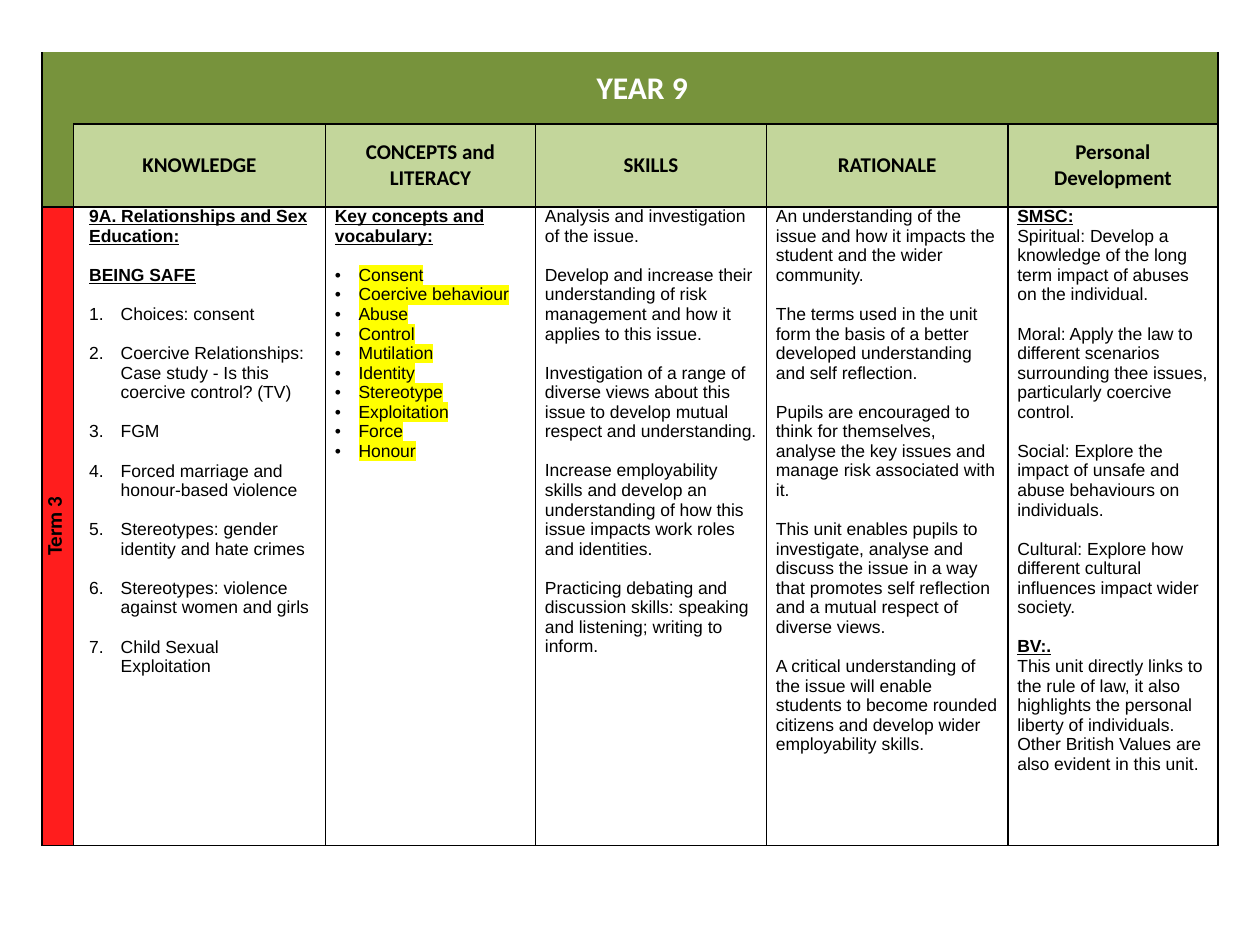
import pptx
import pptx.util
import pptx.dml.color
import pptx.enum.text
import pptx.oxml
import pptx.oxml.ns
from lxml import etree

Pt = pptx.util.Pt
Align = pptx.enum.text.PP_ALIGN
Anchor = pptx.enum.text.MSO_ANCHOR
qn = pptx.oxml.ns.qn

# Content: each body entry is (kind, text, gap before)
TITLE = "YEAR 9 "
TERM = "Term 3"
HEADINGS = ["KNOWLEDGE", "CONCEPTS and LITERACY", "SKILLS", "RATIONALE", "Personal Development"]
LESSONS = [
    "Choices: consent",
    "Coercive Relationships: Case study - Is this coercive control? (TV)",
    "FGM",
    "Forced marriage and honour-based violence",
    "Stereotypes: gender identity and hate crimes",
    "Stereotypes: violence against women and girls",
    "Child Sexual Exploitation",
]
VOCABULARY = ["Consent", "Coercive behaviour", "Abuse", "Control", "Mutilation",
              "Identity", "Stereotype", "Exploitation", "Force", "Honour"]
SKILLS = [
    "Analysis and investigation of the issue.",
    "Develop and increase their understanding of risk management and how it applies to this issue.",
    "Investigation of a range of diverse views about this issue to develop mutual respect and understanding.",
    "Increase employability skills and develop an understanding of how this issue impacts work roles and identities.",
    "Practicing debating and discussion skills: speaking and listening; writing to inform.",
]
RATIONALE = [
    "An understanding of the issue and how it impacts the student and the wider community.",
    "The terms used in the unit form the basis of a better developed understanding and self reflection.",
    "Pupils are encouraged to think for themselves, analyse the key issues and manage risk associated with it.",
    "This unit enables pupils to investigate, analyse and discuss the issue in a way that promotes "
    "self reflection and a mutual respect of diverse views.",
    "A critical understanding of the issue will enable students to become rounded citizens and "
    "develop wider employability skills.",
]
BODIES = [
    [("heading", "9A. Relationships and Sex Education:", False), ("heading", "BEING SAFE", True)]
    + [("number", lesson, True) for lesson in LESSONS],
    [("heading", "Key concepts and vocabulary:", False)]
    + [("bullet", word, index == 0) for index, word in enumerate(VOCABULARY)],
    [("text", skill, index > 0) for index, skill in enumerate(SKILLS)],
    [("text", reason, index > 0) for index, reason in enumerate(RATIONALE)],
    [
        ("heading", "SMSC:", False),
        ("text", "Spiritual: Develop a knowledge of the long term impact of abuses on the individual.", False),
        ("text", "Moral: Apply the law to different scenarios surrounding thee issues, "
                 "particularly coercive control.", True),
        ("text", "Social: Explore the impact of unsafe and abuse behaviours on individuals.", True),
        ("text", "Cultural: Explore how different cultural influences impact wider society.", True),
        ("heading", "BV:.", True),
        ("text", "This unit directly links to the rule of law, it also highlights the personal liberty "
                 "of individuals. Other British Values are also evident in this unit.", False),
    ],
]

THEME = {
    "title_fill": "77933C", "heading_fill": "C3D69B", "term_fill": "FF1D1D", "body_fill": "FFFFFF",
    "ink": "000000", "title_ink": "FFFFFF", "highlight": "FFFF00",
    "display": "Calibri", "body": "Arial",
    "title_size": 18, "heading_size": 12, "body_size": 10,
    "gap": 11.2, "border": 1,
}
COLUMNS = [18, 144, 120, 132, 138, 120]
ROWS = [41, 47.3, 365]
LEFT, TOP = 24, 30
INSET, WIDE_INSET = 5.4, 9
INDENTS = {"number": 18, "bullet": 13.5}
NO_STYLE = "{2D5ABB26-0587-4C30-8999-92F81FD0307C}"


def color(name):
    return pptx.dml.color.RGBColor.from_string(THEME[name])


def format_cell(cell, fill, edges="LRTB", inset=INSET, anchor=Anchor.MIDDLE):
    cell.margin_left = cell.margin_right = Pt(inset)
    cell.margin_top = cell.margin_bottom = 0
    cell.vertical_anchor = anchor
    properties = cell._tc.get_or_add_tcPr()
    for edge in "LRTB":
        line = etree.SubElement(properties, qn(f"a:ln{edge}"), w=str(Pt(THEME["border"])))
        if edge in edges:
            paint = etree.SubElement(line, qn("a:solidFill"))
            etree.SubElement(paint, qn("a:srgbClr"), val=THEME["ink"])
        else:
            etree.SubElement(line, qn("a:noFill"))
    cell.fill.solid()
    cell.fill.fore_color.rgb = color(fill)


def format_font(para, family, size, ink="ink", bold=False):
    para.font.name = THEME[family]
    para.font.size = Pt(THEME[size])
    para.font.color.rgb = color(ink)
    para.font.bold = bold


def write_label(cell, text, size="heading_size", ink="ink"):
    para = cell.text_frame.paragraphs[0]
    para.text = text
    para.alignment = Align.CENTER
    format_font(para, "display", size, ink, bold=True)


def add_marker(para, kind):
    properties = para._p.get_or_add_pPr()
    properties.set("marL", str(Pt(INDENTS[kind])))
    properties.set("indent", str(-Pt(INDENTS[kind])))
    etree.SubElement(properties, qn("a:buFont"), typeface=THEME["body"])
    if kind == "number":
        etree.SubElement(properties, qn("a:buAutoNum"), type="arabicPeriod")
    else:
        etree.SubElement(properties, qn("a:buChar"), char="•")


def write_body(cell, entries):
    frame = cell.text_frame
    for index, (kind, text, gap) in enumerate(entries):
        para = frame.paragraphs[0] if index == 0 else frame.add_paragraph()
        span = para.add_run()
        span.text = text
        if kind in INDENTS:
            add_marker(para, kind)
        if gap:
            para.space_before = Pt(THEME["gap"])
        format_font(para, "body", "body_size", bold=kind == "heading")
        para.font.underline = kind == "heading"
        if kind == "bullet":
            mark = etree.SubElement(span._r.get_or_add_rPr(), qn("a:highlight"))
            etree.SubElement(mark, qn("a:srgbClr"), val=THEME["highlight"])


def main():
    deck = pptx.Presentation()
    deck.slide_width, deck.slide_height = Pt(720), Pt(540)
    page = deck.slides.add_slide(deck.slide_layouts[6])

    # Table grid
    frame = page.shapes.add_table(len(ROWS), len(COLUMNS), Pt(LEFT), Pt(TOP),
                                  Pt(sum(COLUMNS)), Pt(sum(ROWS)))
    table = frame.table
    table.first_row = table.horz_banding = False
    table._tbl.tblPr.find(qn("a:tableStyleId")).text = NO_STYLE
    for column, width in zip(table.columns, COLUMNS):
        column.width = Pt(width)
    for row, height in zip(table.rows, ROWS):
        row.height = Pt(height)

    # Title band and the corner beside it
    table.cell(0, 0).merge(table.cell(1, 0))
    table.cell(0, 1).merge(table.cell(0, 5))
    format_cell(table.cell(0, 0), "title_fill", "LB")
    format_cell(table.cell(0, 1), "title_fill", "RB")
    write_label(table.cell(0, 1), TITLE, "title_size", "title_ink")

    # Term label, read upwards
    term = table.cell(2, 0)
    format_cell(term, "term_fill")
    term._tc.get_or_add_tcPr().set("vert", "vert270")
    write_label(term, TERM)

    # Headings and the text below them
    for column, (heading, entries) in enumerate(zip(HEADINGS, BODIES), start=1):
        format_cell(table.cell(1, column), "heading_fill")
        write_label(table.cell(1, column), heading)
        body = table.cell(2, column)
        format_cell(body, "body_fill", inset=WIDE_INSET if column == 1 else INSET, anchor=Anchor.TOP)
        write_body(body, entries)

    deck.save("out.pptx")


if __name__ == "__main__":
    main()
